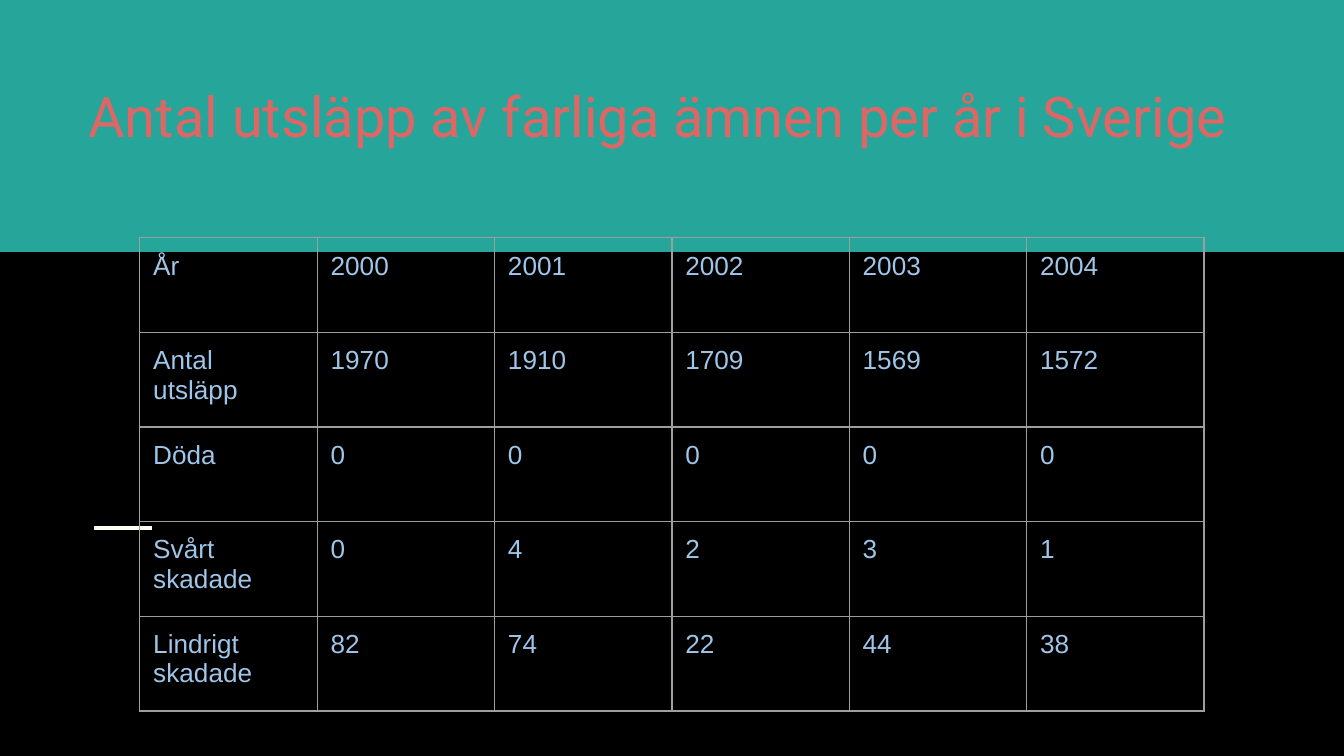
from dataclasses import dataclass

from lxml.etree import SubElement
from pptx import Presentation
from pptx.dml.color import RGBColor
from pptx.enum.shapes import MSO_CONNECTOR, MSO_SHAPE
from pptx.enum.text import MSO_ANCHOR
from pptx.oxml.ns import qn
from pptx.slide import Slide
from pptx.table import _Cell
from pptx.text.text import TextFrame
from pptx.util import Inches, Pt

COLORS = {
    "background": "000000",
    "band": "26A69A",
    "accent": "FFFBF0",
    "title": "E06666",
    "table_text": "9FC5E8",
    "border": "9E9E9E",
}
SLIDE_WIDTH = Inches(10)
SLIDE_HEIGHT = Inches(10 * 9 / 16)
INSET = Inches(0.1)
COLUMN_WIDTH = Inches(1.32)
TABLE_HEIGHT = Inches(3.52)


@dataclass(frozen=True)
class TextStyle:
    font: str
    size: float
    color: str


@dataclass(frozen=True)
class Measure:
    label: str
    values: tuple[int, ...]


TITLE_STYLE = TextStyle("Roboto", 30, "title")
CELL_STYLE = TextStyle("Arial", 14, "table_text")
MEASURES = (
    Measure("År", (2000, 2001, 2002, 2003, 2004)),
    Measure("Antal utsläpp", (1970, 1910, 1709, 1569, 1572)),
    Measure("Döda", (0, 0, 0, 0, 0)),
    Measure("Svårt skadade", (0, 4, 2, 3, 1)),
    Measure("Lindrigt skadade", (82, 74, 22, 44, 38)),
)


def rgb(name: str) -> RGBColor:
    return RGBColor.from_string(COLORS[name])


def write_text(frame: TextFrame, text: str, style: TextStyle) -> None:
    run = frame.paragraphs[0].add_run()
    run.text = text
    run.font.name = style.font
    run.font.size = Pt(style.size)
    run.font.color.rgb = rgb(style.color)


def add_band(slide: Slide) -> None:
    band = slide.shapes.add_shape(
        MSO_SHAPE.RECTANGLE, 0, 0, SLIDE_WIDTH, SLIDE_HEIGHT // 3
    )
    band.shadow.inherit = False
    band.fill.solid()
    band.fill.fore_color.rgb = rgb("band")
    band.line.fill.background()


def add_accent(slide: Slide) -> None:
    accent = slide.shapes.add_connector(
        MSO_CONNECTOR.STRAIGHT,
        Inches(0.7), Inches(3.93), Inches(1.13), Inches(3.93),
    )
    accent.line.color.rgb = rgb("accent")
    accent.line.width = Pt(2.25)
    SubElement(accent._element.spPr, qn("a:effectLst"))


def add_title(slide: Slide, text: str) -> None:
    title = slide.shapes.add_textbox(
        Inches(0.56), Inches(0.35), Inches(8.88), Inches(0.86)
    )
    frame = title.text_frame
    frame.word_wrap = True
    frame.vertical_anchor = MSO_ANCHOR.BOTTOM
    frame.margin_left = frame.margin_right = INSET
    frame.margin_top = frame.margin_bottom = INSET
    write_text(frame, text, TITLE_STYLE)


def add_borders(cell: _Cell) -> None:
    properties = cell._tc.get_or_add_tcPr()
    for side in ("lnL", "lnR", "lnT", "lnB"):
        border = SubElement(properties, qn(f"a:{side}"), w=str(Pt(0.75)))
        fill = SubElement(border, qn("a:solidFill"))
        SubElement(fill, qn("a:srgbClr"), val=COLORS["border"])


def fill_cell(cell: _Cell, text: str) -> None:
    cell.margin_left = cell.margin_right = INSET
    cell.margin_top = cell.margin_bottom = INSET
    add_borders(cell)
    cell.fill.background()
    write_text(cell.text_frame, text, CELL_STYLE)


def add_measures(slide: Slide, measures: tuple[Measure, ...]) -> None:
    column_count = len(measures[0].values) + 1
    table = slide.shapes.add_table(
        len(measures), column_count, Inches(1.04), Inches(1.77),
        COLUMN_WIDTH * column_count, TABLE_HEIGHT,
    ).table
    table.first_row = False
    table.horz_banding = False
    for row, measure in zip(table.rows, measures):
        for cell, entry in zip(row.cells, (measure.label, *measure.values)):
            fill_cell(cell, str(entry))


def main() -> None:
    presentation = Presentation()
    presentation.slide_width = SLIDE_WIDTH
    presentation.slide_height = SLIDE_HEIGHT
    slide = presentation.slides.add_slide(presentation.slide_layouts[6])
    slide.background.fill.solid()
    slide.background.fill.fore_color.rgb = rgb("background")
    add_band(slide)
    add_accent(slide)
    add_title(slide, "Antal utsläpp av farliga ämnen per år i Sverige")
    add_measures(slide, MEASURES)
    presentation.save("out.pptx")


if __name__ == "__main__":
    main()
